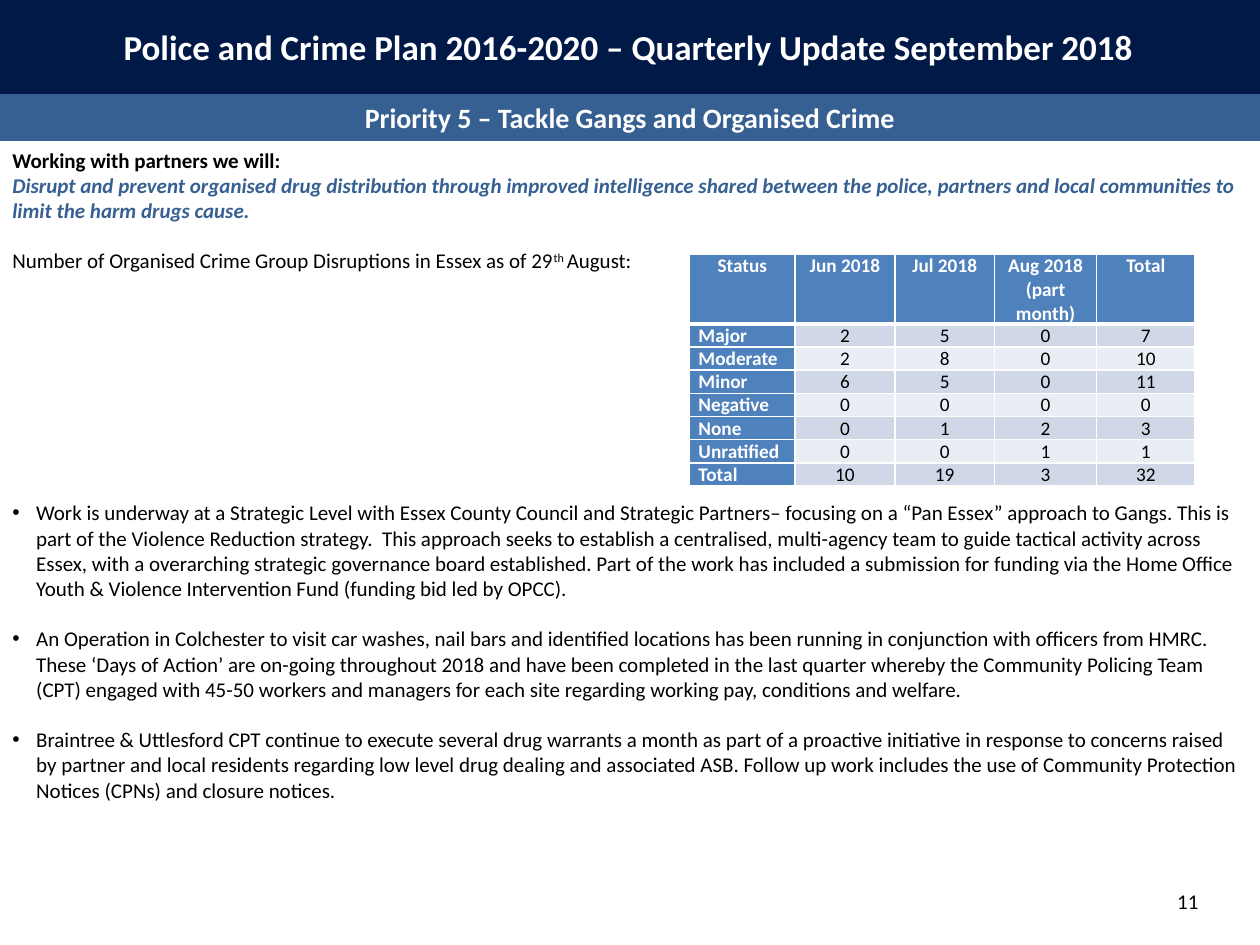
import dataclasses
import typing

import pptx
import pptx.dml.color
import pptx.enum.shapes
import pptx.enum.text
import pptx.oxml
import pptx.oxml.ns
import pptx.util

Cm, Pt = pptx.util.Cm, pptx.util.Pt
ALIGN = pptx.enum.text.PP_ALIGN
ANCHOR = pptx.enum.text.MSO_ANCHOR
FONT = "Calibri"
LINE = 14.4  # height in points of one line of body text
INDENT = Cm(0.48)
COLORS = {
    "navy": "001947", "blue": "376092", "header": "4F81BD",
    "band_dark": "D0D8E8", "band_light": "E9EDF4",
    "white": "FFFFFF", "black": "000000",
}


@dataclasses.dataclass
class Run:
    text: str
    color: str = "black"
    size: float = 12
    bold: bool = False
    italic: bool = False
    superscript: bool = False


@dataclasses.dataclass
class Para:
    runs: list[Run]
    align: typing.Any = ALIGN.LEFT
    blank_lines: int = 0  # gap above, in lines
    bullet: bool = False


@dataclasses.dataclass
class Box:
    left: float
    top: float
    width: float
    height: float
    paras: list[Para]
    fill: str | None = None
    anchor: typing.Any = ANCHOR.TOP


def rgb(name: str) -> pptx.dml.color.RGBColor:
    return pptx.dml.color.RGBColor.from_string(COLORS[name])


def add_bullet(p) -> None:
    pPr = p._p.get_or_add_pPr()
    pPr.set("marL", str(INDENT))
    pPr.set("indent", str(-INDENT))
    ns = pptx.oxml.ns.nsdecls("a")
    pPr.append(pptx.oxml.parse_xml(f'<a:buFont {ns} typeface="Arial"/>'))
    pPr.append(pptx.oxml.parse_xml(f'<a:buChar {ns} char="•"/>'))


def write(tf, paras: list[Para]) -> None:
    for i, para in enumerate(paras):
        p = tf.add_paragraph() if i else tf.paragraphs[0]
        fmt = {"alignment": para.align, "space_before": Pt(para.blank_lines * LINE)}
        for name, value in fmt.items():
            setattr(p, name, value)
        if para.bullet:
            add_bullet(p)
        for run in para.runs:
            r = p.add_run()
            r.text = run.text
            font = {"name": FONT, "size": Pt(run.size), "bold": run.bold, "italic": run.italic}
            for name, value in font.items():
                setattr(r.font, name, value)
            r.font.color.rgb = rgb(run.color)
            if run.superscript:
                r._r.get_or_add_rPr().set("baseline", "30000")


def add_box(s, box: Box) -> None:
    at = [Cm(v) for v in (box.left, box.top, box.width, box.height)]
    if box.fill:
        sp = s.shapes.add_shape(pptx.enum.shapes.MSO_SHAPE.RECTANGLE, *at)
        sp.shadow.inherit = False
        sp.fill.solid()
        sp.fill.fore_color.rgb = rgb(box.fill)
        sp.line.fill.background()
    else:
        sp = s.shapes.add_textbox(*at)
    tf = sp.text_frame
    for name, value in {"word_wrap": True, "vertical_anchor": box.anchor}.items():
        setattr(tf, name, value)
    write(tf, box.paras)


def set_borders(cell, widths: dict[str, float]) -> None:
    tcPr = cell._tc.get_or_add_tcPr()
    for i, (side, width) in enumerate(widths.items()):
        tcPr.insert(i, pptx.oxml.parse_xml(
            f'<a:{side} {pptx.oxml.ns.nsdecls("a")} w="{Pt(width)}"><a:solidFill>'
            f'<a:srgbClr val="{COLORS["white"]}"/></a:solidFill></a:{side}>'))


def add_status_table(s, rows: list[list[str]], widths: list[float]) -> None:
    heights = [1.39] + [0.46] * (len(rows) - 1)
    table = s.shapes.add_table(len(rows), len(widths), Cm(13.9), Cm(5.13),
                               Cm(sum(widths)), Cm(sum(heights))).table
    for col, width in zip(table.columns, widths):
        col.width = Cm(width)
    for i, (row, values) in enumerate(zip(table.rows, rows)):
        row.height = Cm(heights[i])
        for j, value in enumerate(values):
            cell = row.cells[j]
            side = Cm(0) if j == len(widths) - 1 else Cm(0.18)
            margins = {"margin_left": side, "margin_right": side,
                       "margin_top": Cm(0), "margin_bottom": Cm(0)}
            for name, length in margins.items():
                setattr(cell, name, length)
            heading = i == 0 or j == 0
            band = "band_dark" if i % 2 else "band_light"
            cell.fill.solid()
            cell.fill.fore_color.rgb = rgb("header" if heading else band)
            set_borders(cell, {"lnL": 1, "lnR": 1, "lnT": 3 if i == 1 else 1,
                               "lnB": 3 if i == 0 else 1})
            align = ALIGN.LEFT if i and j == 0 else ALIGN.CENTER
            color = "white" if heading else "black"
            write(cell.text_frame, [Para([Run(text, color, 11, heading)], align)
                                    for text in value.split("\n")])


BODY = [
    Para([Run("Working with partners we will:", bold=True)]),
    Para([Run("Disrupt and prevent organised drug distribution through improved intelligence "
              "shared between the police, partners and local communities to limit the harm "
              "drugs cause.", "blue", bold=True, italic=True)]),
    Para([Run("Number of Organised Crime Group Disruptions in Essex as of 29"),
          Run("th ", superscript=True), Run("August:")], blank_lines=1),
    Para([Run("Work is underway at a Strategic Level with Essex County Council and Strategic "
              "Partners– focusing on a “Pan Essex” approach to Gangs. This is part of the "
              "Violence Reduction strategy.  This approach seeks to establish a centralised, "
              "multi-agency team to guide tactical activity across Essex, with a overarching "
              "strategic governance board established. Part of the work has included a "
              "submission for funding via the Home Office Youth & Violence Intervention Fund "
              "(funding bid led by OPCC).")], blank_lines=9, bullet=True),
    Para([Run("An Operation in Colchester to visit car washes, nail bars and identified "
              "locations has been running in conjunction with officers from HMRC. These ‘Days "
              "of Action’ are on-going throughout 2018 and have been completed in the last "
              "quarter whereby the Community Policing Team (CPT) engaged with 45-50 workers "
              "and managers for each site regarding working pay, conditions and welfare.")],
         blank_lines=1, bullet=True),
    Para([Run("Braintree & Uttlesford CPT continue to execute several drug warrants a month as "
              "part of a proactive initiative in response to concerns raised by partner and "
              "local residents regarding low level drug dealing and associated ASB. Follow up "
              "work includes the use of Community Protection Notices (CPNs) and closure "
              "notices.")], blank_lines=1, bullet=True),
]
TITLE = Run("Police and Crime Plan 2016-2020 – Quarterly Update September 2018", "white", 20, True)
PRIORITY = Run("Priority 5 – Tackle Gangs and Organised Crime", "white", 16, True)
BOXES = [
    Box(0, 0, 25.4, 1.9, [], "navy"),  # title band
    Box(18.49, 17.65, 5.92, 1.02, [Para([Run("11")], ALIGN.RIGHT)], anchor=ANCHOR.MIDDLE),
    Box(0, 2.84, 25.37, 14.1, BODY),
    Box(0, 1.9, 25.4, 0.94, [Para([PRIORITY], ALIGN.CENTER)], "blue"),
    Box(-0.03, 0.38, 25.4, 1.12, [Para([TITLE], ALIGN.CENTER)]),
]
STATUS_ROWS = [
    ["Status", "Jun 2018", "Jul 2018", "Aug 2018\n(part month)", "Total"],
    ["Major", "2", "5", "0", "7"],
    ["Moderate", "2", "8", "0", "10"],
    ["Minor", "6", "5", "0", "11"],
    ["Negative", "0", "0", "0", "0"],
    ["None", "0", "1", "2", "3"],
    ["Unratified", "0", "0", "1", "1"],
    ["Total", "10", "19", "3", "32"],
]


def main() -> None:
    prs = pptx.Presentation()
    prs.slide_width, prs.slide_height = Cm(25.4), Cm(19.05)
    s = prs.slides.add_slide(prs.slide_layouts[6])
    for box in BOXES:
        add_box(s, box)
    add_status_table(s, STATUS_ROWS, [2.13, 2.01, 2.01, 2.06, 1.98])
    prs.save("out.pptx")


if __name__ == "__main__":
    main()
